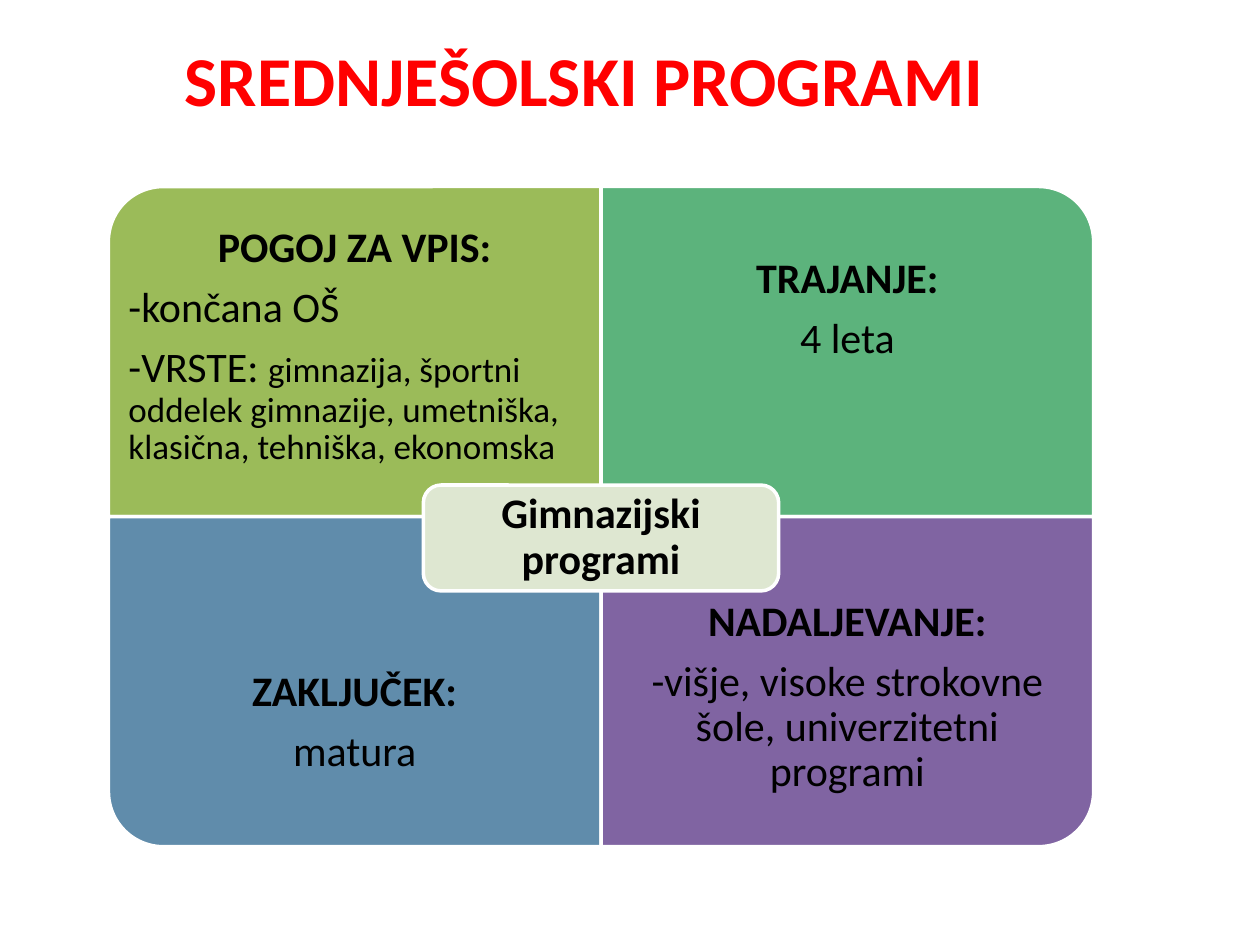
from pptx import Presentation
from pptx.dml.color import RGBColor
from pptx.enum.shapes import MSO_SHAPE as Shape
from pptx.enum.text import MSO_ANCHOR as Anchor, PP_ALIGN as Align
from pptx.util import Inches, Pt

COLORS = {
    "title": "FF0000",
    "text": "000000",
    "edge": "FFFFFF",
    "entry": "9BBB59",
    "duration": "5CB37C",
    "finish": "608CAB",
    "onward": "8064A2",
    "hub": "DEE7D1",
}
FONT = "Calibri"
LEFT, TOP = 0.86, 1.48
CELL_W, CELL_H = 3.91, 2.62
TEXT_H = CELL_H * 0.75
HUB_W, HUB_H = 2.82, 0.84


def add_run(paragraph, text, size=24, bold=False, color="text"):
    """Append one formatted run to a paragraph."""
    run = paragraph.add_run()
    run.text = text
    run.font.name = FONT
    run.font.size = Pt(size)
    run.font.bold = bold
    run.font.color.rgb = RGBColor.from_string(COLORS[color])


def add_panel(slide, preset, center, size, color, turn=0):
    """Add a filled panel with a white edge, centred on a point and turned."""
    width, height = size[::-1] if turn % 180 else size
    x, y = center
    panel = slide.shapes.add_shape(
        preset, Inches(x - width / 2), Inches(y - height / 2), Inches(width), Inches(height))
    panel.rotation = turn
    panel.shadow.inherit = False
    panel.fill.solid()
    panel.fill.fore_color.rgb = RGBColor.from_string(COLORS[color])
    panel.line.color.rgb = RGBColor.from_string(COLORS["edge"])
    panel.line.width = Pt(2)
    return panel


def fill_frame(frame, paragraphs, side):
    """Write (alignment, runs) paragraphs into a vertically centred frame."""
    frame.word_wrap = True
    frame.vertical_anchor = Anchor.MIDDLE
    frame.margin_left = frame.margin_right = Inches(side)
    frame.margin_top = frame.margin_bottom = 0
    for index, (align, runs) in enumerate(paragraphs):
        paragraph = frame.add_paragraph() if index else frame.paragraphs[0]
        paragraph.alignment = align
        paragraph.line_spacing = 0.9
        paragraph.space_after = Pt(8.4)
        for run in runs:
            add_run(paragraph, *run)


def add_quadrant(slide, col, row, color, turn, text_center, side, heading, body):
    """Add one quadrant of the matrix with its heading and body text."""
    x = LEFT + col * CELL_W
    center = x + CELL_W / 2, TOP + (row + 0.5) * CELL_H
    add_panel(slide, Shape.ROUND_1_RECTANGLE, center, (CELL_W, CELL_H), color, turn)
    box = slide.shapes.add_textbox(
        Inches(x), Inches(text_center - TEXT_H / 2), Inches(CELL_W), Inches(TEXT_H))
    fill_frame(box.text_frame, [(Align.CENTER, [(heading, 24, True)])] + body, side)


def add_title(slide, text):
    """Place and format the title placeholder."""
    title = slide.shapes.title
    title.left, title.top = Inches(0.55), 0
    title.width, title.height = Inches(8.17), Inches(1.25)
    title.text_frame.vertical_anchor = Anchor.MIDDLE
    heading = title.text_frame.paragraphs[0]
    heading.alignment = Align.CENTER
    add_run(heading, text, 40, True, "title")


def main():
    """Build the slide and save it."""
    deck = Presentation()
    deck.slide_width, deck.slide_height = Inches(10), Inches(7.5)
    slide = deck.slides.add_slide(deck.slide_layouts[5])
    add_title(slide, "SREDNJEŠOLSKI PROGRAMI")

    upper = TOP + TEXT_H / 2
    lower = TOP + 2 * CELL_H - TEXT_H / 2
    kinds = "gimnazija, športni oddelek gimnazije, umetniška, klasična, tehniška, ekonomska"
    onward = "-višje, visoke strokovne šole, univerzitetni programi"
    quadrants = [
        (0, 0, "entry", 270, upper + 0.29, 0.16, "POGOJ ZA VPIS:",
         [(Align.LEFT, [("-končana OŠ",)]),
          (Align.LEFT, [("-VRSTE: ",), (kinds, 20)])]),
        (1, 0, "duration", 0, upper, 0.19, "TRAJANJE:", [(Align.CENTER, [("4 leta",)])]),
        (0, 1, "finish", 180, lower, 0.19, "ZAKLJUČEK:", [(Align.CENTER, [("matura",)])]),
        (1, 1, "onward", 90, lower - 0.2, 0.19, "NADALJEVANJE:",
         [(Align.CENTER, [(onward,)])]),
    ]
    for quadrant in quadrants:
        add_quadrant(slide, *quadrant)

    hub = add_panel(slide, Shape.ROUNDED_RECTANGLE, (LEFT + CELL_W, TOP + CELL_H + 0.17),
                    (HUB_W, HUB_H), "hub")
    fill_frame(hub.text_frame, [(Align.CENTER, [("Gimnazijski programi", 24, True)])], 0.14)
    deck.save("out.pptx")


if __name__ == "__main__":
    main()
